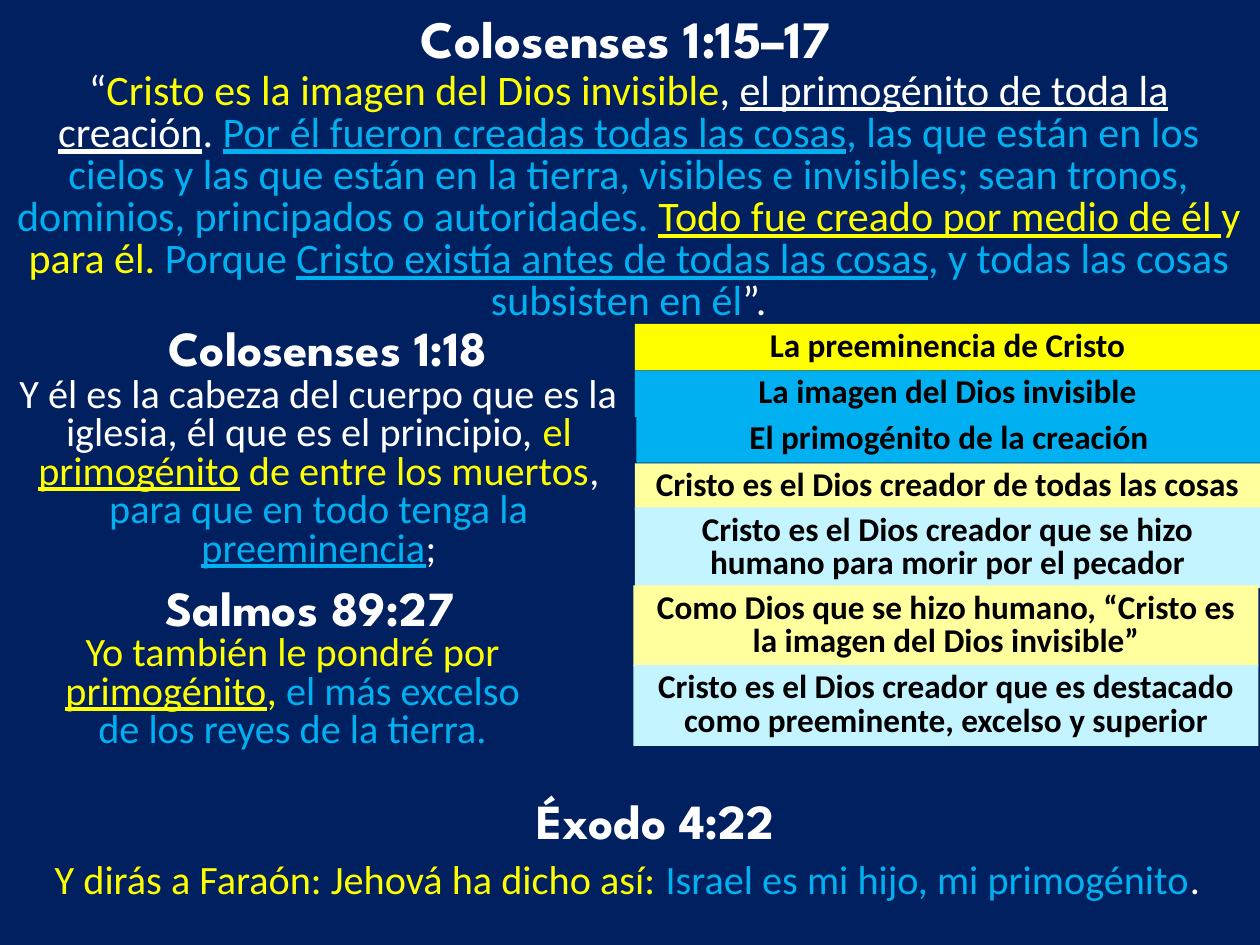
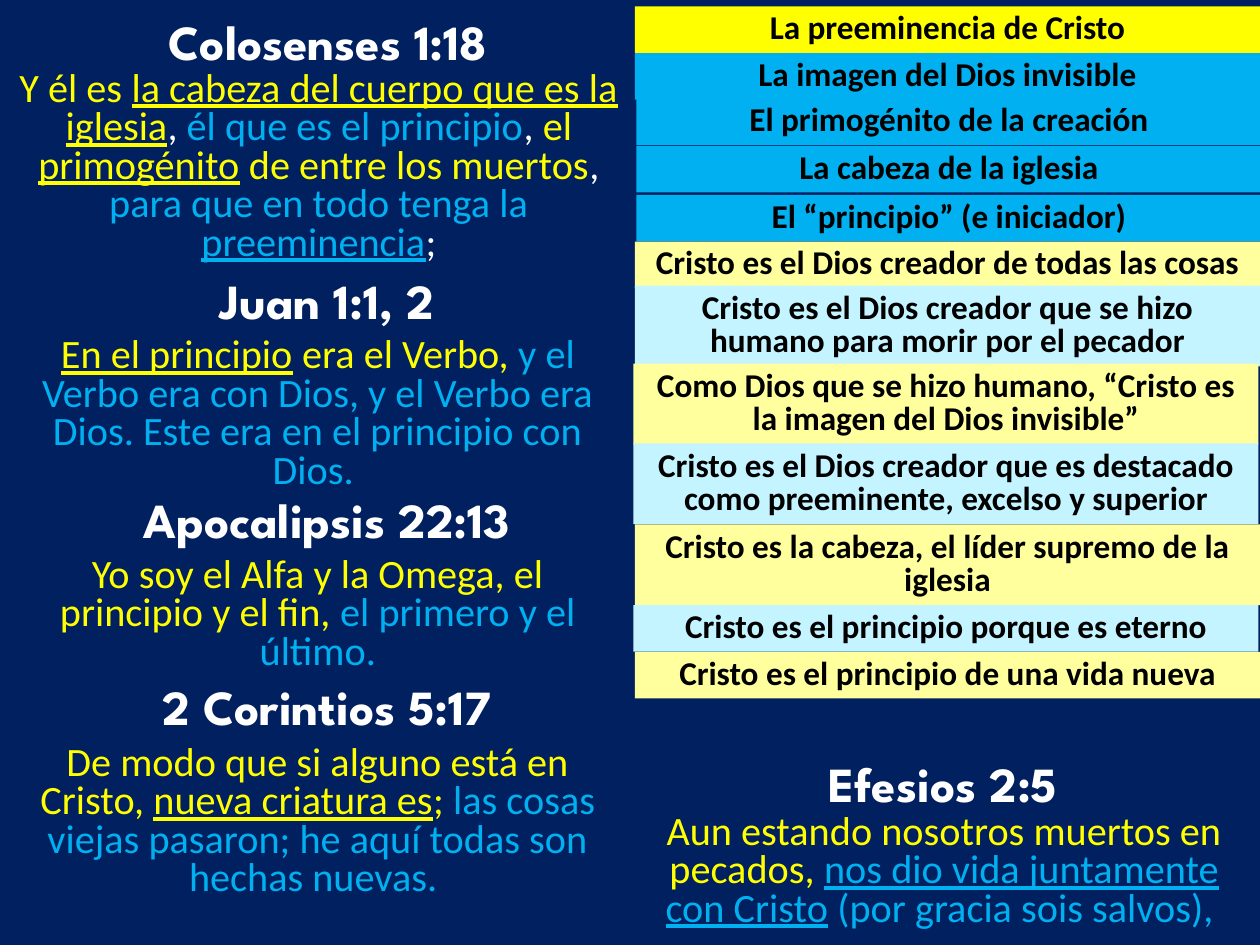
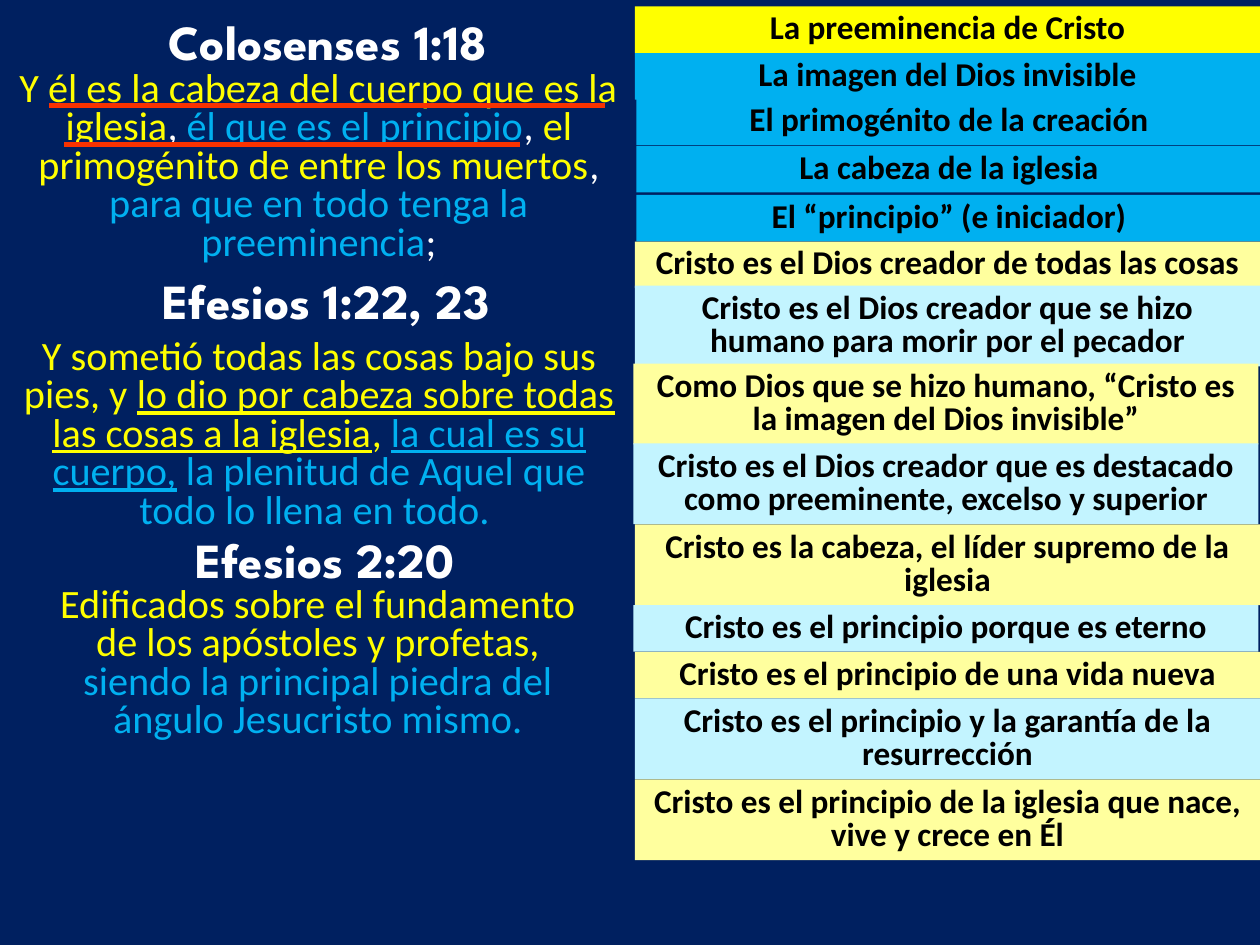
from dataclasses import dataclass

import pptx
import pptx.dml.color
import pptx.enum.shapes
import pptx.enum.text
import pptx.util
from pptx.util import Cm, Pt


@dataclass(frozen=True)
class Theme:
    navy: str = "002060"
    white: str = "FFFFFF"
    black: str = "000000"
    yellow: str = "FFFF00"
    blue: str = "00B0F0"
    cream: str = "FFFF9E"
    ice: str = "C3F4FF"
    red: str = "F93200"
    title_font: str = "League Spartan"
    body_font: str = "Calibri"
    lead_title: int = 30
    title: int = 28
    lead_body: int = 24
    body: int = 23
    band: int = 19
    lead_leading: int = 24
    body_leading: int = 22


@dataclass(frozen=True)
class Band:
    text: str
    fill: str
    step: float
    lines: int = 1
    dx: float = 0


T = Theme()
INK = {"w": T.white, "y": T.yellow, "b": T.blue}
TITLE_W, TITLE_H = 12.6, 1.45
BAND_W = 12.6
BAND_H = {1: 0.94, 2: 1.63}
BAND_X = 12.8

HEAD_BANDS = [
    Band("La preeminencia de Cristo", T.yellow, 0.94),
    Band("La imagen del Dios invisible", T.blue, 0.92),
    Band("El primogénito de la creación", T.blue, 0.95, dx=0.03),
]
CHURCH_BANDS = [
    Band("La cabeza de la iglesia", T.blue, 0.99, dx=0.03),
    Band("El “principio” (e iniciador)", T.blue, 0.94, dx=0.03),
]
CREATOR_BANDS = [
    Band("Cristo es el Dios creador de todas las cosas", T.cream, 0.89),
    Band("Cristo es el Dios creador que se hizo humano para morir por el pecador",
         T.ice, 1.57, 2),
    Band("Como Dios que se hizo humano, “Cristo es la imagen del Dios invisible”",
         T.cream, 1.61, 2, -0.03),
    Band("Cristo es el Dios creador que es destacado como preeminente, excelso y superior",
         T.ice, 1.63, 2, -0.03),
]
BEGINNING_BANDS = [
    Band("Cristo es la cabeza, el líder supremo de la iglesia", T.cream, 1.63, 2),
    Band("Cristo es el principio porque es eterno", T.ice, 0.94, dx=-0.03),
    Band("Cristo es el principio de una vida nueva", T.cream, 0.94),
]
RESURRECTION_BANDS = [
    Band("Cristo es el principio y la garantía de la resurrección", T.ice, 1.63, 2),
    Band("Cristo es el principio de la iglesia que nace, vive y crece en Él",
         T.cream, 1.63, 2),
]


def rgb(value):
    return pptx.dml.color.RGBColor.from_string(value)


def write(sp, runs, leading=None):
    tf = sp.text_frame
    frame = {"word_wrap": True,
             "auto_size": pptx.enum.text.MSO_AUTO_SIZE.SHAPE_TO_FIT_TEXT}
    for name, value in frame.items():
        setattr(tf, name, value)
    p = tf.paragraphs[0]
    p.alignment = pptx.enum.text.PP_ALIGN.CENTER
    if leading:
        p.line_spacing = Pt(leading)
    for text, color, fmt in runs:
        r = p.add_run()
        r.text = text
        for name, value in fmt.items():
            setattr(r.font, name, value)
        r.font.color.rgb = rgb(color)


def add_text(s, box, runs, leading=None):
    sp = s.shapes.add_textbox(*map(Cm, box))
    write(sp, runs, leading)


def add_passage(s, box, title, verse, drop=1.22, shift=0.18, lead=False):
    x, y, w, h = box
    title_size = T.lead_title if lead else T.title
    body_size = T.lead_body if lead else T.body
    title_fmt = {"name": T.title_font, "size": Pt(title_size), "bold": True}
    body_fmt = {"name": T.body_font, "size": Pt(body_size)}
    title_box = (x + (w - TITLE_W) / 2 + shift, y, TITLE_W, TITLE_H)
    add_text(s, title_box, [(title, T.white, title_fmt)])
    runs = [(text, INK[style[0]], {**body_fmt, "underline": "u" in style})
            for style, text in verse]
    add_text(s, (x, y + drop, w, h - drop), runs,
             T.lead_leading if lead else T.body_leading)


def add_bands(s, x, y, bands):
    fmt = {"name": T.body_font, "size": Pt(T.band), "bold": True}
    for band in bands:
        sp = s.shapes.add_shape(
            pptx.enum.shapes.MSO_SHAPE.RECTANGLE,
            Cm(x + band.dx), Cm(y), Cm(BAND_W), Cm(BAND_H[band.lines]))
        sp.shadow.inherit = False
        sp.fill.solid()
        sp.fill.fore_color.rgb = rgb(band.fill)
        sp.line.fill.background()
        sp.text_frame.vertical_anchor = pptx.enum.text.MSO_ANCHOR.MIDDLE
        write(sp, [(band.text, T.black, fmt)], T.band)
        y += band.step


def add_underline(s, x, y, w):
    line = s.shapes.add_connector(
        pptx.enum.shapes.MSO_CONNECTOR.STRAIGHT, Cm(x), Cm(y), Cm(x + w), Cm(y))
    line.line.color.rgb = rgb(T.red)
    line.line.width = Pt(3)
    pptx.oxml.ns
    props = line._element.spPr
    props.append(pptx.oxml.parse_xml(
        f'<a:effectLst {pptx.oxml.ns.nsdecls("a")}/>'))


def add_slide(prs):
    s = prs.slides.add_slide(prs.slide_layouts[6])
    s.background.fill.solid()
    s.background.fill.fore_color.rgb = rgb(T.navy)
    return s


def build_image_of_god(prs):
    s = add_slide(prs)
    add_passage(s, (0, 0, 25.35, 6.73), "Colosenses 1:15–17", [
        ("w", "“"),
        ("y", "Cristo es la imagen del Dios invisible"),
        ("w", ", "),
        ("wu", "el primogénito de toda la creación"),
        ("w", ". "),
        ("bu", "Por él fueron creadas todas las cosas"),
        ("b", ", las que están en los cielos y las que están en la tierra, visibles e "
              "invisibles; sean tronos, dominios, principados o autoridades. "),
        ("yu", "Todo fue creado por medio de él "),
        ("y", "y para él. "),
        ("b", "Porque "),
        ("bu", "Cristo existía antes de todas las cosas"),
        ("b", ", y todas las cosas subsisten en él"),
        ("w", "”."),
    ], drop=1.32, shift=-0.06, lead=True)
    add_bands(s, BAND_X, 6.53, HEAD_BANDS + CREATOR_BANDS)
    add_passage(s, (0.13, 6.27, 12.6, 5.41), "Colosenses 1:18", [
        ("w", "Y él es la cabeza del cuerpo que es la iglesia, él que es el principio, "),
        ("y", "el "),
        ("yu", "primogénito"),
        ("y", " de entre los muertos"),
        ("w", ", "),
        ("b", "para que en todo tenga la "),
        ("bu", "preeminencia"),
        ("w", ";"),
    ])
    add_passage(s, (0.71, 11.51, 10.39, 3.81), "Salmos 89:27", [
        ("y", "Yo también le pondré por "),
        ("yu", "primogénito"),
        ("y", ", "),
        ("b", "el más excelso de los reyes de la tierra."),
    ], drop=1.19, shift=0.34)
    add_passage(s, (0.13, 15.82, 25.22, 2.54), "Éxodo 4:22", [
        ("y", "Y dirás a Faraón: Jehová ha dicho así: "),
        ("b", "Israel es mi hijo, mi primogénito"),
        ("w", ". "),
    ], drop=1.47, shift=0.47)


def build_beginning(prs):
    s = add_slide(prs)
    add_bands(s, BAND_X, 0.13,
              HEAD_BANDS + CHURCH_BANDS + CREATOR_BANDS + BEGINNING_BANDS)
    add_passage(s, (0.13, 0.1, 12.6, 5.41), "Colosenses 1:18", [
        ("y", "Y él es "),
        ("yu", "la cabeza del cuerpo que es la iglesia"),
        ("w", ", "),
        ("b", "él que es el principio"),
        ("w", ", "),
        ("y", "el "),
        ("yu", "primogénito"),
        ("y", " de entre los muertos"),
        ("w", ", "),
        ("b", "para que en todo tenga la "),
        ("bu", "preeminencia"),
        ("w", ";"),
    ])
    add_passage(s, (0.1, 5.33, 12.62, 4.77), "Juan 1:1, 2", [
        ("yu", "En el principio"),
        ("y", " era el Verbo, "),
        ("b", "y el Verbo era con Dios, y el Verbo era Dios. "
              "Este era en el principio con Dios. "),
    ], drop=1.37)
    add_passage(s, (0.1, 9.75, 12.62, 3.99), "Apocalipsis 22:13", [
        ("y", "Yo soy el Alfa y la Omega, el principio y el fin, "),
        ("b", "el primero y el último."),
    ], drop=1.37)
    add_passage(s, (0.1, 13.51, 12.62, 4.8), "2 Corintios 5:17", [
        ("y", "De modo que si alguno está en Cristo, "),
        ("yu", "nueva criatura es"),
        ("y", "; "),
        ("b", "las cosas viejas pasaron; he aquí todas son hechas nuevas. "),
    ], drop=1.4)
    add_passage(s, (12.73, 15.06, 12.62, 3.86), "Efesios 2:5", [
        ("y", "Aun estando nosotros muertos en pecados, "),
        ("bu", "nos dio vida juntamente con Cristo"),
        ("b", " (por gracia sois salvos), "),
    ], drop=1.24, shift=-0.03)


def build_head_of_church(prs):
    s = add_slide(prs)
    add_bands(s, BAND_X, 0.13, HEAD_BANDS + CHURCH_BANDS + CREATOR_BANDS
              + BEGINNING_BANDS + RESURRECTION_BANDS)
    add_passage(s, (0.13, 0.1, 12.6, 5.41), "Colosenses 1:18", [
        ("y", "Y él es la cabeza del cuerpo que es la iglesia"),
        ("w", ", "),
        ("b", "él que es el principio"),
        ("w", ", "),
        ("y", "el primogénito de entre los muertos"),
        ("w", ", "),
        ("b", "para que en todo tenga la preeminencia"),
        ("w", ";"),
    ])
    add_underline(s, 0.99, 2.13, 11.2)
    add_underline(s, 1.3, 2.92, 9.19)
    add_passage(s, (0.13, 5.33, 12.62, 5.59), "Efesios 1:22, 23", [
        ("y", "Y sometió todas las cosas bajo sus pies, y "),
        ("yu", "lo dio por cabeza sobre todas las cosas a la iglesia"),
        ("y", ", "),
        ("bu", "la cual es su cuerpo,"),
        ("b", " la plenitud de Aquel que todo lo llena en todo. "),
    ], drop=1.4, shift=0.14)
    add_passage(s, (0.61, 10.54, 11.61, 4.59), "Efesios 2:20", [
        ("y", "Edificados sobre el fundamento de los apóstoles y profetas, "),
        ("b", "siendo la principal piedra del ángulo Jesucristo mismo."),
    ], drop=1.19, shift=0.14)


def main():
    prs = pptx.Presentation()
    prs.slide_width, prs.slide_height = Cm(25.4), Cm(19.05)
    for build in (build_image_of_god, build_beginning, build_head_of_church):
        build(prs)
    prs.save("out.pptx")


if __name__ == "__main__":
    main()
